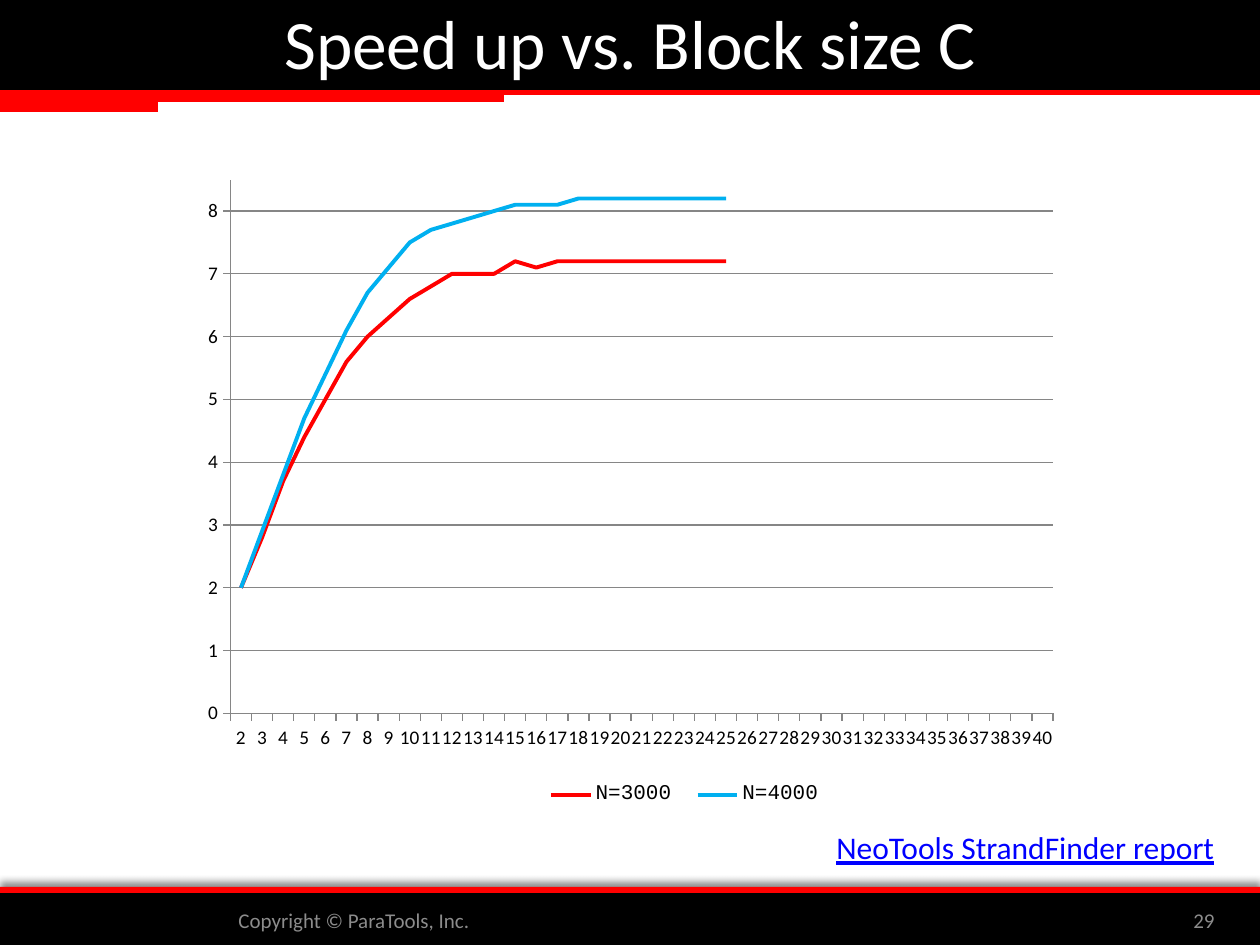
from lxml import etree
from pptx import Presentation
from pptx.chart.data import CategoryChartData
from pptx.dml.color import RGBColor
from pptx.enum.chart import (XL_CHART_TYPE, XL_LEGEND_POSITION,
                             XL_MARKER_STYLE, XL_TICK_MARK)
from pptx.enum.shapes import MSO_SHAPE
from pptx.enum.text import MSO_ANCHOR, PP_ALIGN
from pptx.oxml import parse_xml
from pptx.oxml.ns import nsdecls, qn
from pptx.util import Emu, Pt

RECT = MSO_SHAPE.RECTANGLE
LINE = XL_CHART_TYPE.LINE
BOTTOM = XL_LEGEND_POSITION.BOTTOM
PLAIN = XL_MARKER_STYLE.NONE
OUT, NONE = XL_TICK_MARK.OUTSIDE, XL_TICK_MARK.NONE
MID, TOP = MSO_ANCHOR.MIDDLE, MSO_ANCHOR.TOP
LEFT, MIDDLE, RIGHT = PP_ALIGN.LEFT, PP_ALIGN.CENTER, PP_ALIGN.RIGHT

RED, BLACK, WHITE, GREY, RULE = "FF0000", "000000", "FFFFFF", "8C8C8C", "868686"
HEAD = {"name": "Calibri", "size": Pt(39.6)}
LINK = {"name": "Calibri", "size": Pt(18), "underline": True}
FOOT = {"name": "Calibri", "size": Pt(12)}
AXIS = {"name": "Calibri", "size": Pt(11)}
KEY = {"name": "Courier New", "size": Pt(12)}

BARS = [
    (0, 81, 1260, 14, RED),
    (0, 71, 158, 41, RED),
    (0, 74, 504, 28, RED),
    (0, 0, 1260, 88, BLACK),
]
SERIES = [
    ("N=3000", RED, [2, 2.8, 3.7, 4.4, 5, 5.6, 6, 6.3, 6.6, 6.8, 7, 7, 7,
                     7.2, 7.1] + [7.2] * 9),
    ("N=4000", "00B0F0", [2, 2.9, 3.8, 4.7, 5.4, 6.1, 6.7, 7.1, 7.5, 7.7,
                          7.8, 7.9, 8, 8.1, 8.1, 8.1] + [8.2] * 8),
]


def px(n):
    return Emu(round(n * 914400 / 126))


def rgb(code):
    return RGBColor.from_string(code)


def style(font, form, color):
    for key, val in form.items():
        setattr(font, key, val)
    font.color.rgb = rgb(color)


def bar(slide, x, y, w, h, color):
    shape = slide.shapes.add_shape(RECT, px(x), px(y), px(w), px(h))
    shape.shadow.inherit = False
    shape.fill.solid()
    shape.fill.fore_color.rgb = rgb(color)
    if color == BLACK:
        shape.line.color.rgb = rgb(color)
        shape.line.width = Pt(2)
    else:
        shape.line.fill.background()
    return shape


def shade(shape):
    glow = shape._element.spPr.find(qn("a:effectLst"))
    glow.append(parse_xml(
        f'<a:outerShdw {nsdecls("a")} blurRad="50800" dist="38100" '
        'dir="16200000" rotWithShape="0"><a:srgbClr val="000000">'
        '<a:alpha val="43000"/></a:srgbClr></a:outerShdw>'))


def write(shape, text, form, color, align=LEFT, anchor=MID, wrap=True):
    frame = shape.text_frame
    frame.word_wrap = wrap
    frame.vertical_anchor = anchor
    para = frame.paragraphs[0]
    para.alignment = align
    run = para.add_run()
    run.text = text
    style(run.font, form, color)


def label(slide, x, y, w, h, *args, **opts):
    write(slide.shapes.add_textbox(px(x), px(y), px(w), px(h)), *args, **opts)


def title(slide, text):
    shape = slide.shapes.title
    slide.shapes._spTree.append(shape._element)
    spot = {"left": px(0), "top": px(-2), "width": px(1260), "height": px(88)}
    for key, val in spot.items():
        setattr(shape, key, val)
    write(shape, text, HEAD, WHITE, MIDDLE)


def place(node, index, box, inner=False):
    for old in node.findall(qn("c:layout")):
        node.remove(old)
    lay = parse_xml(f'<c:layout {nsdecls("c")}><c:manualLayout/></c:layout>')
    parts = [("layoutTarget", "inner")] if inner else []
    parts += [("xMode", "edge"), ("yMode", "edge")] + list(zip("xywh", box))
    for tag, val in parts:
        etree.SubElement(lay[0], qn("c:" + tag)).set("val", str(val))
    node.insert(index, lay)


def scale(axis):
    axis.major_tick_mark, axis.minor_tick_mark = OUT, NONE
    axis.format.line.color.rgb = rgb(RULE)
    axis.format.line.width = Pt(0.75)
    style(axis.tick_labels.font, AXIS, BLACK)


def graph(slide, x, y, w, h):
    data = CategoryChartData()
    data.categories = range(2, 41)
    for name, _, vals in SERIES:
        data.add_series(name, vals)
    chart = slide.shapes.add_chart(LINE, px(x), px(y), px(w), px(h), data).chart
    chart.has_title = False
    style(chart.font, {"name": "Calibri", "size": Pt(10)}, BLACK)
    for line, (_, color, _) in zip(chart.plots[0].series, SERIES):
        line.smooth = False
        line.marker.style = PLAIN
        line.format.line.color.rgb = rgb(color)
        line.format.line.width = Pt(2.25)

    cats, vals = chart.category_axis, chart.value_axis
    scale(cats)
    scale(vals)
    node = cats._element
    node.find(qn("c:txPr")).find(qn("a:bodyPr")).set("rot", "0")
    skip = parse_xml(f'<c:tickLblSkip {nsdecls("c")} val="1"/>')
    node.find(qn("c:noMultiLvlLbl")).addprevious(skip)
    span = {"minimum_scale": 0, "maximum_scale": 8.5, "major_unit": 1,
            "has_major_gridlines": True}
    for key, val in span.items():
        setattr(vals, key, val)
    grid = vals.major_gridlines.format.line
    grid.color.rgb = rgb(RULE)
    grid.width = Pt(0.75)
    vals.tick_labels.number_format = "General"
    vals.tick_labels.number_format_is_linked = False

    chart.has_legend = True
    chart.legend.position = BOTTOM
    chart.legend.include_in_layout = False
    style(chart.legend.font, KEY, BLACK)
    place(chart.legend._element, 1, (0.39, 0.93, 0.34, 0.06))
    area = chart._chartSpace.chart.plotArea
    place(area, 0, (0.056, 0.021, 0.913, 0.815), True)


def main():
    deck = Presentation()
    deck.slide_width, deck.slide_height = px(1260), px(945)
    slide = deck.slides.add_slide(deck.slide_layouts[5])
    shade(bar(slide, 0, 887, 1260, 14, RED))
    bar(slide, 0, 895, 1260, 50, BLACK)
    for row in BARS:
        bar(slide, *row)
    title(slide, "Speed up vs. Block size C")
    graph(slide, 180, 166, 901, 655)
    label(slide, 824, 822, 436, 50, "NeoTools StrandFinder report",
          LINK, "0000FF", anchor=TOP, wrap=False)
    label(slide, 226, 895, 850, 50, "Copyright © ParaTools, Inc.", FOOT, GREY)
    label(slide, 1103, 895, 124, 50, "29", FOOT, GREY, RIGHT)
    deck.save("out.pptx")


if __name__ == "__main__":
    main()
